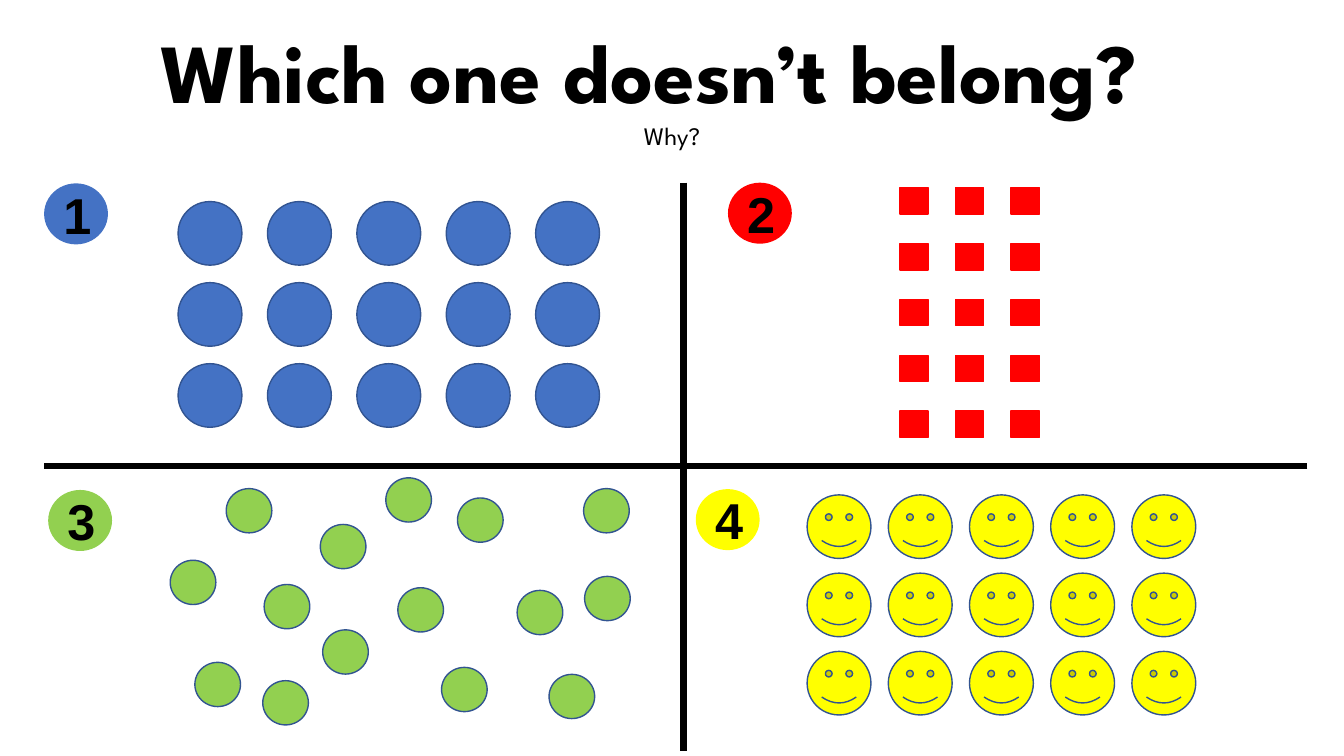
from dataclasses import dataclass
from lxml.etree import SubElement
from pptx import Presentation
from pptx.dml.color import RGBColor
from pptx.enum.shapes import MSO_CONNECTOR, MSO_SHAPE
from pptx.enum.text import MSO_ANCHOR, MSO_AUTO_SIZE, PP_ALIGN
from pptx.oxml.ns import qn
from pptx.util import Pt


@dataclass(frozen=True)
class Theme:
    blue: str = "4472C4"
    red: str = "FF0000"
    green: str = "92D050"
    yellow: str = "FFFF00"
    outline: str = "325491"
    ink: str = "000000"
    display: str = "League Spartan"
    number: str = "Arial"
    title_size: int = 60
    question_size: int = 18
    number_size: int = 36
    divider: float = 4.5


T = Theme()

TITLE = ("Which one doesn’t belong?", (0, 10, 927, 80), T.title_size, True)
QUESTION = ("Why?", (0, 82.6, 960, 29), T.question_size, False)

ARRAYS = [
    dict(kind=MSO_SHAPE.OVAL, cols=5, rows=3, start=(127.2, 144),
         step=(63.85, 57.9), size=(45.6, 45.4), fill=T.blue, line=T.outline),
    dict(kind=MSO_SHAPE.RECTANGLE, cols=3, rows=5, start=(642.8, 134.1),
         step=(39.7, 39.9), size=(20.2, 18.8), fill=T.red, line=T.red),
    dict(kind=MSO_SHAPE.SMILEY_FACE, cols=5, rows=3, start=(576.5, 353.5),
         step=(58, 55.9), size=(45.6, 45.4), fill=T.yellow, line=T.outline),
]

DOT_SIZE = (32.6, 31.6)
DOTS = [
    (416.9, 349), (369.4, 421.7), (417.6, 411.7), (326.8, 355.7),
    (121.6, 400.2), (392.2, 481.7), (161.6, 349), (284.2, 419.8),
    (228.8, 374.6), (315.4, 476.7), (230.5, 449.9), (188.7, 417.5),
    (139.2, 473.1), (187.7, 486.2), (275.6, 341.3),
]

BADGE_SIZE = (45.6, 43.6)
BADGES = [
    ("1", (31.5, 131), T.blue),
    ("3", (34.4, 350), T.green),
    ("2", (520, 130.5), T.red),
    ("4", (497, 349.4), T.yellow),
]
DIVIDERS = [(488.2, 130.5, 488.2, 536.5), (933.8, 332.8, 31.5, 332.8)]


def rgb(value):
    return RGBColor.from_string(value)


def add_figure(shapes, kind, pos, size, fill, line=None):
    sp = shapes.add_shape(kind, *map(Pt, (*pos, *size)))
    sp.shadow.inherit = False
    sp.fill.solid()
    sp.fill.fore_color.rgb = rgb(fill)
    if line:
        sp.line.color.rgb = rgb(line)
        sp.line.width = Pt(1)
    else:
        sp.line.fill.background()
    return sp


def set_text(tf, text, font, size, bold):
    tf.text = text
    p = tf.paragraphs[0]
    p.alignment = PP_ALIGN.CENTER
    p.space_before = Pt(0)
    f = p.runs[0].font
    f.name, f.size, f.bold = font, Pt(size), bold
    f.color.rgb = rgb(T.ink)


def fill_heading(sp, text, box, size, bold):
    sp.left, sp.top, sp.width, sp.height = map(Pt, box)
    tf = sp.text_frame
    tf.word_wrap = True
    tf.auto_size = MSO_AUTO_SIZE.NONE
    tf.vertical_anchor = MSO_ANCHOR.TOP
    set_text(tf, text, T.display, size, bold)


def add_array(s, kind, cols, rows, start, step, size, fill, line):
    group = s.shapes.add_group_shape()
    for row in range(rows):
        for col in range(cols):
            pos = (start[0] + col * step[0], start[1] + row * step[1])
            add_figure(group.shapes, kind, pos, size, fill, line)


def add_frame(s):
    shapes = s.shapes.add_group_shape().shapes
    for ends in DIVIDERS:
        line = shapes.add_connector(MSO_CONNECTOR.STRAIGHT, *map(Pt, ends))
        line.line.color.rgb = rgb(T.ink)
        line.line.width = Pt(T.divider)
        SubElement(line._element.spPr, qn("a:effectLst"))
    for number, pos, fill in BADGES:
        sp = add_figure(shapes, MSO_SHAPE.OVAL, pos, BADGE_SIZE, fill)
        sp.text_frame.vertical_anchor = MSO_ANCHOR.MIDDLE
        set_text(sp.text_frame, number, T.number, T.number_size, True)


def main():
    prs = Presentation()
    prs.slide_width, prs.slide_height = Pt(960), Pt(540)
    s = prs.slides.add_slide(prs.slide_layouts[0])
    fill_heading(s.shapes.title, *TITLE)
    fill_heading(s.placeholders[1], *QUESTION)
    for array in ARRAYS:
        add_array(s, **array)
    for pos in DOTS:
        add_figure(s.shapes, MSO_SHAPE.OVAL, pos, DOT_SIZE, T.green, T.outline)
    add_frame(s)
    prs.save("out.pptx")


if __name__ == "__main__":
    main()
